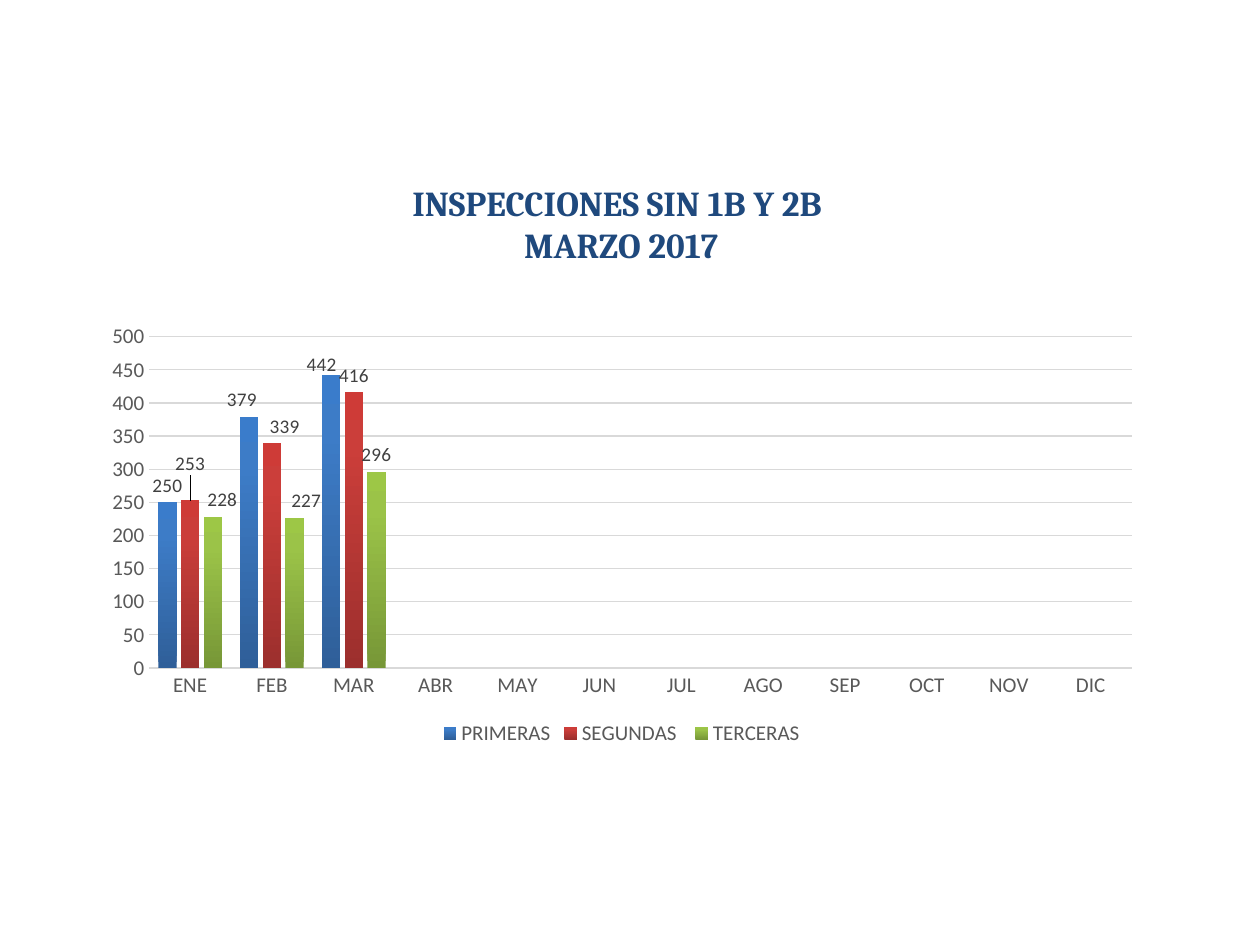
from lxml import etree
from pptx import Presentation
from pptx import util as u
from pptx.chart.data import CategoryChartData
from pptx.dml.color import RGBColor
from pptx.enum import chart as ch, text
from pptx.oxml import parse_xml
from pptx.oxml.ns import nsdecls, qn

WIDTH, HEIGHT = 10, 7.5
MONTHS = ["ENE", "FEB", "MAR", "ABR", "MAY", "JUN", "JUL", "AGO", "SEP", "OCT", "NOV", "DIC"]
INSPECTIONS = {
    "PRIMERAS": ([250, 379, 442], ["2F5F99", "3D7CC7", "3A7CCB"]),
    "SEGUNDAS ": ([253, 339, 416], ["9C2F2D", "CB3E3A", "CE3B37"]),
    "TERCERAS": ([228, 227, 296], ["779737", "9BC348", "9DC746"]),
}
STOPS = [0, 80, 100]
LABEL_SHIFTS = {
    ("PRIMERAS", 1): (-0.007, 0),
    ("PRIMERAS", 2): (-0.009, 0.015),
    ("SEGUNDAS ", 0): (0, -0.045),
    ("SEGUNDAS ", 1): (0.012, 0),
    ("TERCERAS", 0): (0.009, 0),
    ("TERCERAS", 1): (0.011, 0),
}
TITLE_FONT = {"name": "Cambria", "size": u.Pt(20), "bold": True}
AXIS_FONT = {"name": "Calibri", "size": u.Pt(12), "bold": False}
LABEL_FONT = {"name": "Calibri", "size": u.Pt(11), "bold": False}


def rgb(value):
    """Return the colour for a hex string."""
    return RGBColor.from_string(value)


def apply(target, formats):
    """Set each format value on the target."""
    for key, value in formats.items():
        setattr(target, key, value)


def style_font(font, formats, color):
    """Set the font's formats and colour."""
    apply(font, formats)
    font.color.rgb = rgb(color)


def area(left, top, width, height):
    """Turn shares of the slide's size into lengths."""
    return [u.Inches(round(share * side, 2)) for share, side in
            zip((left, top, width, height), (WIDTH, HEIGHT) * 2)]


def layout(**values):
    """Return a manual chart layout with the given values."""
    root = parse_xml(f"<c:layout {nsdecls('c')}><c:manualLayout/></c:layout>")
    for tag, value in values.items():
        etree.SubElement(root[0], qn(f"c:{tag}"), val=str(value))
    return root


def add_title(slide, lines):
    """Add the centred heading, one paragraph a line."""
    frame = slide.shapes.add_textbox(*area(0.114, 0.185, 0.758, 0.148)).text_frame
    frame.word_wrap = True
    frame.text = "\n".join(lines)
    for paragraph in frame.paragraphs:
        paragraph.alignment = text.PP_ALIGN.CENTER
        style_font(paragraph.runs[0].font, TITLE_FONT, "1F497D")


def fill_bars(series, colors):
    """Fill the bars with an upward gradient."""
    stops = "".join(f'<a:gs pos="{stop * 1000}"><a:srgbClr val="{color}"/></a:gs>'
                    for stop, color in zip(STOPS, colors))
    series.format.line.fill.background()
    series.format.fill.background()
    bars = series.format.fill._xPr
    bars.replace(bars.find(qn("a:noFill")), parse_xml(
        f'<a:gradFill {nsdecls("a")} rotWithShape="1"><a:gsLst>{stops}</a:gsLst>'
        '<a:lin ang="16200000" scaled="0"/></a:gradFill>'))


def label_bars(series):
    """Show the values above the bars, shifting the crowded ones."""
    outside = ch.XL_LABEL_POSITION.OUTSIDE_END
    apply(series.data_labels, {"show_value": True, "position": outside})
    style_font(series.data_labels.font, LABEL_FONT, "404040")
    for (name, index), (x, y) in LABEL_SHIFTS.items():
        if name == series.name:
            label = series.points[index].data_label
            label.position = outside
            style_font(label.font, LABEL_FONT, "404040")
            entry = series.data_labels._element.find(f"{qn('c:dLbl')}[{qn('c:idx')}][@val]")
            entry = next(item for item in series.data_labels._element.findall(qn("c:dLbl"))
                         if item.find(qn("c:idx")).get("val") == str(index)) if entry is None else entry
            entry.insert(1, layout(x=x, y=y))


def style_axes(chart):
    """Format both axes and the gridlines."""
    months, counts = chart.category_axis, chart.value_axis
    for axis in (months, counts):
        axis.major_tick_mark = ch.XL_TICK_MARK.NONE
        style_font(axis.tick_labels.font, AXIS_FONT, "595959")
    apply(counts, {"minimum_scale": 0, "maximum_scale": 500, "major_unit": 50})
    counts.format.line.fill.background()
    for part, width in ((months, 1), (counts.major_gridlines, 0.75)):
        part.format.line.color.rgb = rgb("D9D9D9")
        part.format.line.width = u.Pt(width)


def add_inspections(slide):
    """Add the monthly column chart of inspections."""
    data = CategoryChartData()
    data.categories = MONTHS
    for name, (counts, _) in INSPECTIONS.items():
        data.add_series(name, counts + [None] * (len(MONTHS) - len(counts)))
    chart = slide.shapes.add_chart(ch.XL_CHART_TYPE.COLUMN_CLUSTERED,
                                   *area(0.072, 0.333, 0.843, 0.461), data).chart
    style_font(chart.font, {"name": "Calibri", "size": u.Pt(10)}, "000000")
    apply(chart, {"has_title": False, "has_legend": True})
    apply(chart.legend, {"position": ch.XL_LEGEND_POSITION.BOTTOM, "include_in_layout": False})
    style_font(chart.legend.font, AXIS_FONT, "595959")
    plot = chart.plots[0]
    apply(plot, {"gap_width": 100, "overlap": -24, "vary_by_categories": False})
    for series in plot.series:
        fill_bars(series, INSPECTIONS[series.name][1])
        label_bars(series)
    style_axes(chart)
    plot_area = chart._chartSpace.chart.plotArea
    for automatic in plot_area.findall(qn("c:layout")):
        plot_area.remove(automatic)
    plot_area.insert(0, layout(layoutTarget="inner", xMode="edge", yMode="edge",
                               x=0.055, y=0.05, w=0.925, h=0.76))


def main():
    """Build the slide and save it."""
    deck = Presentation()
    apply(deck, {"slide_width": u.Inches(WIDTH), "slide_height": u.Inches(HEIGHT)})
    slide = deck.slides.add_slide(deck.slide_layouts[6])
    add_title(slide, ["INSPECCIONES SIN 1B Y 2B ", "MARZO 2017"])
    add_inspections(slide)
    deck.save("out.pptx")


if __name__ == "__main__":
    main()
